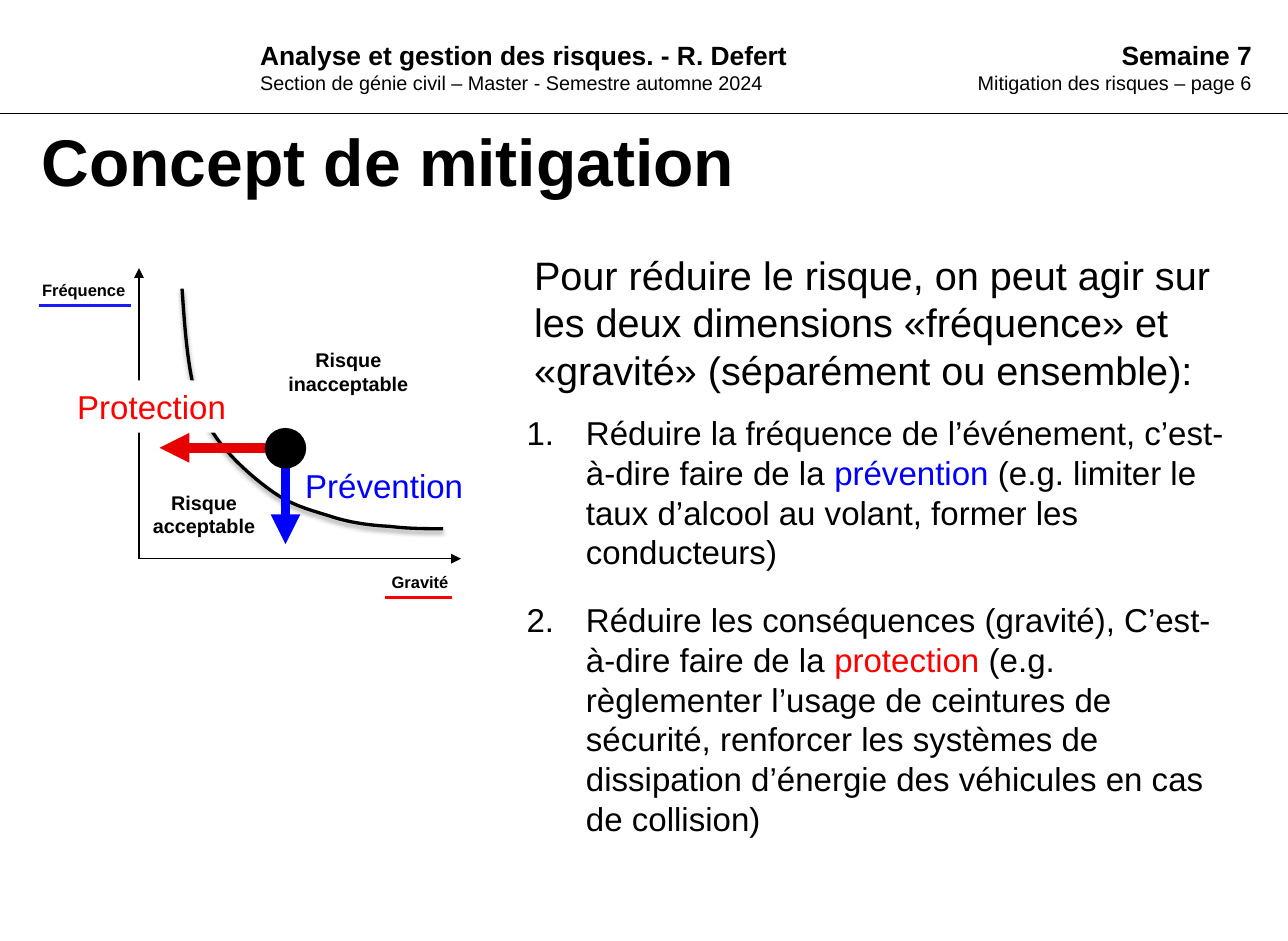
from lxml import etree
from pptx import Presentation
from pptx import util as u
from pptx.dml.color import RGBColor
from pptx.enum import shapes, text
from pptx.oxml import ns

Cm, Pt = u.Cm, u.Pt


class Theme:
    face = "Arial"
    black, white = "000000", "FFFFFF"
    blue, red = "0000FF", "FF0000"
    rule, arrow = "1A1AFF", "E70000"
    title, lead, body, head, note, axis = 40, 24, 20, 16, 12, 10


def write(shape, paras, size=Theme.body, bold=False, color=Theme.black,
          align="LEFT", wrap=True, anchor="TOP", inset=0.25, num=None):
    """Each paragraph is a list of (text, overrides) runs."""
    frame = shape.text_frame
    frame.auto_size = text.MSO_AUTO_SIZE.NONE
    frame.word_wrap = wrap
    frame.vertical_anchor = getattr(text.MSO_ANCHOR, anchor)
    frame.margin_left = frame.margin_right = Cm(inset)
    frame.margin_top = frame.margin_bottom = Cm(0.13)
    for i, runs in enumerate(paras):
        para = frame.add_paragraph() if i else frame.paragraphs[0]
        props = para._p.get_or_add_pPr()
        props.set("marL", str(Cm(1.27) if num else 0))
        props.set("indent", str(-Cm(1.27) if num else 0))
        if num:
            etree.SubElement(props, ns.qn("a:buAutoNum"),
                             type="arabicPeriod", startAt=str(num))
        else:
            etree.SubElement(props, ns.qn("a:buNone"))
        para.alignment = getattr(text.PP_ALIGN, align)
        para.space_before = Pt(0)
        for words, over in runs:
            run = para.add_run()
            run.text = words
            font = run.font
            font.name = Theme.face
            font.size = Pt(over.get("size", size))
            font.bold = over.get("bold", bold)
            font.color.rgb = RGBColor.from_string(over.get("color", color))


def draw(x1, y1, x2, y2, color, width, tip=False):
    line = slide.shapes.add_connector(
        shapes.MSO_CONNECTOR.STRAIGHT, Cm(x1), Cm(y1), Cm(x2), Cm(y2))
    line.line.color.rgb = RGBColor.from_string(color)
    line.line.width = Pt(width)
    if tip:
        etree.SubElement(line.line._get_or_add_ln(), ns.qn("a:tailEnd"), type="triangle")
    etree.SubElement(line._element.spPr, ns.qn("a:effectLst"))


deck = Presentation()
deck.slide_width, deck.slide_height = Cm(27.52), Cm(20.11)
slide = deck.slides.add_slide(deck.slide_layouts[4])
holders = {h.placeholder_format.idx: h for h in slide.placeholders}
spare = holders[4]._element
spare.getparent().remove(spare)

# Page header
draw(0, 2.43, 27.52, 2.43, Theme.black, 0.75)
heads = [
    (5.31, 15.42, "LEFT", "Analyse et gestion des risques. - R. Defert",
     "Section de génie civil – Master - Semestre automne 2024"),
    (19, 8, "RIGHT", "Semaine 7", "Mitigation des risques – page 6"),
]
for x, w, align, top, sub in heads:
    box = slide.shapes.add_textbox(Cm(x), Cm(0.71), Cm(w), Cm(1.45))
    write(box, [[(top, {"size": Theme.head, "bold": True})], [(sub, {})]],
          size=Theme.note, align=align)

# Title, lead and numbered measures
blue, red = {"color": Theme.blue}, {"color": Theme.red}
parts = [
    (0, 0.61, 2.44, 22.83, 1.98, [("Concept de mitigation", {})],
     dict(size=Theme.title, bold=True, anchor="MIDDLE")),
    (1, 11.13, 5.23, 15.52, 3.63,
     [("Pour réduire le risque, on peut agir sur les deux dimensions "
       "«fréquence» et «gravité» (séparément ou ensemble):", {})],
     dict(size=Theme.lead)),
    (2, 10.97, 8.69, 15.52, 3.91,
     [("Réduire la fréquence de l’événement, c’est-à-dire faire de la ", {}),
      ("prévention ", blue),
      ("(e.g. limiter le taux d’alcool au volant, former les conducteurs)", {})],
     dict(num=1)),
    (3, 10.97, 12.69, 15.52, 4.88,
     [("Réduire les conséquences (gravité), C’est-à-dire faire de la ", {}),
      ("protection ", red),
      ("(e.g. règlementer l’usage de ceintures de sécurité, renforcer les "
       "systèmes de dissipation d’énergie des véhicules en cas de collision)", {})],
     dict(num=2)),
]
for idx, x, y, w, h, runs, form in parts:
    item = holders[idx]
    item.left, item.top, item.width, item.height = Cm(x), Cm(y), Cm(w), Cm(h)
    write(item, [runs], inset=0.28, **form)

# Risk curve: start point, then three points for each Bézier segment
knots = [
    (3.89, 6.17),
    (3.94, 6.88), (3.99, 7.59), (4.11, 8.15),
    (4.24, 8.69), (4.39, 9.04), (4.67, 9.42),
    (4.98, 9.83), (5.46, 10.26), (5.87, 10.54),
    (6.27, 10.82), (6.71, 10.92), (7.11, 11.05),
    (7.52, 11.18), (7.95, 11.23), (8.33, 11.25),
    (8.74, 11.3), (9.09, 11.3), (9.47, 11.3),
]
points = [(Cm(x), Cm(y)) for x, y in knots]
form = slide.shapes.build_freeform(*points[0])
form.add_line_segments(points[1:], close=False)
curve = form.convert_to_shape()
curve.fill.background()
curve.line.color.rgb = RGBColor.from_string(Theme.black)
curve.line.width = Pt(2)
steps = list(curve._element.iter(ns.qn("a:lnTo")))
for i in range(0, len(steps), 3):
    bend = etree.Element(ns.qn("a:cubicBezTo"))
    steps[i].addprevious(bend)
    for step in steps[i:i + 3]:
        bend.append(step[0])
        step.getparent().remove(step)

# Soft shadow under the curve
curve.shadow.inherit = False
glow = etree.SubElement(curve._element.spPr.find(ns.qn("a:effectLst")),
                        ns.qn("a:outerShdw"), blurRad=str(Pt(3.1)),
                        dist=str(Pt(1.6)), dir="5400000", rotWithShape="0")
tint = etree.SubElement(glow, ns.qn("a:srgbClr"), val=Theme.black)
etree.SubElement(tint, ns.qn("a:alpha"), val="38000")

# Axes, label rules and action arrows
draw(2.97, 11.94, 9.85, 11.94, Theme.black, 0.75, tip=True)
draw(2.97, 11.94, 2.97, 5.73, Theme.black, 0.75, tip=True)
draw(0.84, 6.53, 2.79, 6.53, Theme.rule, 2.25)
draw(8.23, 12.77, 9.65, 12.77, Theme.red, 2.25)
draw(6.1, 9.57, 6.1, 11.63, Theme.blue, 6, tip=True)
draw(5.66, 9.57, 3.41, 9.57, Theme.arrow, 6, tip=True)

# Chart labels
small = dict(size=Theme.axis, bold=True)
zone = dict(size=Theme.note, bold=True, align="CENTER")
labels = [
    (0.65, 5.86, 2.77, 0.69, ["Fréquence"], small),
    (7.78, 12.09, 2.39, 0.69, ["Gravité"], dict(small, align="CENTER")),
    (5.44, 7.31, 4.01, 1.27, ["Risque", "inacceptable"], zone),
    (2.8, 10.35, 3.12, 1.27, ["Risque", "acceptable"], zone),
    (6.27, 9.81, 3.91, 1.12, ["Prévention"], dict(blue, wrap=False)),
    (1.4, 8.13, 3.71, 1.12, ["Protection"], dict(red, wrap=False)),
]
for x, y, w, h, rows, form in labels:
    box = slide.shapes.add_textbox(Cm(x), Cm(y), Cm(w), Cm(h))
    write(box, [[(row, {})] for row in rows], **form)
    if rows == ["Protection"]:
        box.fill.solid()
        box.fill.fore_color.rgb = RGBColor.from_string(Theme.white)

# Current risk
dot = slide.shapes.add_shape(shapes.MSO_SHAPE.OVAL, Cm(5.67), Cm(9.16), Cm(0.86), Cm(0.84))
dot.shadow.inherit = False
dot.fill.solid()
dot.fill.fore_color.rgb = dot.line.color.rgb = RGBColor.from_string(Theme.black)
dot.line.width = Pt(0.75)

deck.save("out.pptx")
